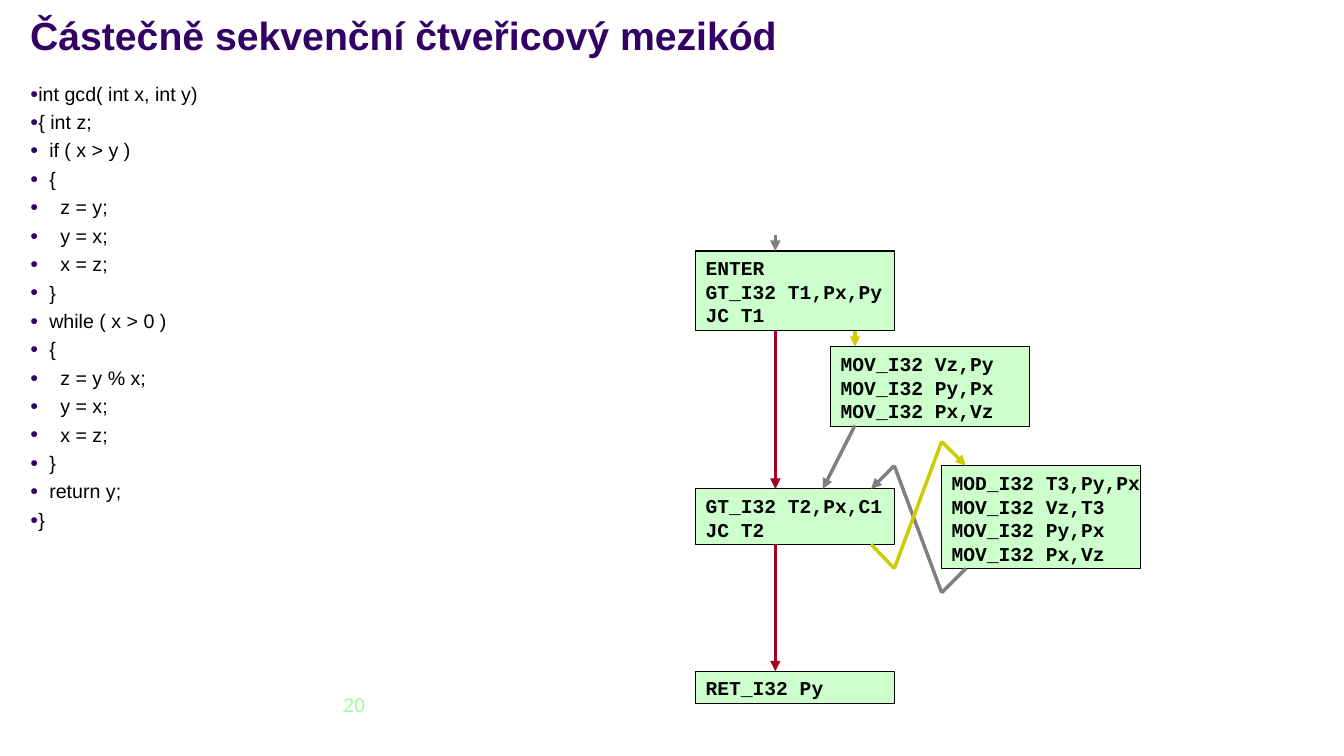
from dataclasses import dataclass
from itertools import pairwise

from lxml import etree
from pptx import Presentation
from pptx.dml.color import RGBColor
from pptx.enum.shapes import MSO_CONNECTOR, MSO_SHAPE
from pptx.enum.text import MSO_ANCHOR, PP_ALIGN
from pptx.oxml.ns import qn
from pptx.util import Inches, Pt

RECTANGLE = MSO_SHAPE.RECTANGLE
STRAIGHT = MSO_CONNECTOR.STRAIGHT
TOP, BOTTOM = MSO_ANCHOR.TOP, MSO_ANCHOR.BOTTOM
LEFT, RIGHT = PP_ALIGN.LEFT, PP_ALIGN.RIGHT

PURPLE, BLACK, PALE_GREEN, LIGHT_GREEN = "330066", "000000", "CCFFCC", "99FF99"
RED, GRAY, YELLOW = "A50021", "808080", "CCCC00"

BLOCK_WIDTH = 1.97
FIRST_LINE_HEIGHT, NEXT_LINE_HEIGHT = 0.32, 0.235
BULLET_WIDTH, LEVEL_INDENT = 0.08, 0.11


@dataclass(frozen=True)
class Block:
    left: float
    top: float
    instructions: tuple[str, ...]


@dataclass(frozen=True)
class Flow:
    color: str
    points: tuple[tuple[float, float], ...]


@dataclass(frozen=True)
class CodeLine:
    level: int
    text: str


SOURCE_CODE = (
    CodeLine(0, "int gcd( int x, int y)"),
    CodeLine(0, "{ int z;"),
    CodeLine(1, "if ( x > y )"),
    CodeLine(1, "{"),
    CodeLine(2, "z = y;"),
    CodeLine(2, "y = x;"),
    CodeLine(2, "x = z;"),
    CodeLine(1, "}"),
    CodeLine(1, "while ( x > 0 )"),
    CodeLine(1, "{"),
    CodeLine(2, "z = y % x;"),
    CodeLine(2, "y = x;"),
    CodeLine(2, "x = z;"),
    CodeLine(1, "}"),
    CodeLine(1, "return y;"),
    CodeLine(0, "}"),
)

BLOCKS = (
    Block(6.9, 2.49, ("ENTER", "GT_I32 T1,Px,Py", "JC T1")),
    Block(6.9, 4.85, ("GT_I32 T2,Px,C1", "JC T2")),
    Block(6.9, 6.66, ("RET_I32 Py",)),
    Block(8.24, 3.44, ("MOV_I32 Vz,Py", "MOV_I32 Py,Px", "MOV_I32 Px,Vz")),
    Block(9.34, 4.62, ("MOD_I32 T3,Py,Px", "MOV_I32 Vz,T3", "MOV_I32 Py,Px", "MOV_I32 Px,Vz")),
)

FLOWS = (
    Flow(RED, ((7.69, 3.28), (7.69, 4.85))),
    Flow(GRAY, ((8.48, 4.22), (8.16, 4.85))),
    Flow(GRAY, ((9.58, 5.64), (9.34, 5.88), (8.87, 4.62), (8.64, 4.85))),
    Flow(YELLOW, ((8.64, 5.4), (8.87, 5.64), (9.34, 4.38), (9.58, 4.62))),
    Flow(RED, ((7.69, 5.4), (7.69, 6.66))),
    Flow(YELLOW, ((8.48, 3.28), (8.48, 3.44))),
    Flow(GRAY, ((7.69, 2.33), (7.69, 2.49))),
)


def rgb(color: str) -> RGBColor:
    return RGBColor.from_string(color)


def write(frame, text: str, *, size=14, font="Arial", color=BLACK, bold=False,
          align=LEFT, anchor=TOP, wrap=True, line_spacing=None, space_before=0) -> None:
    frame.word_wrap = wrap
    frame.vertical_anchor = anchor
    frame.text = text
    for index, paragraph in enumerate(frame.paragraphs):
        paragraph.alignment = align
        paragraph.space_before = Pt(space_before if index else 0)
        if line_spacing:
            paragraph.line_spacing = Pt(line_spacing)
        for run in paragraph.runs:
            run.font.size = Pt(size)
            run.font.name = font
            run.font.bold = bold
            run.font.color.rgb = rgb(color)


def add_text(slide, left: float, top: float, width: float, height: float, text: str, **text_format):
    box = slide.shapes.add_textbox(Inches(left), Inches(top), Inches(width), Inches(height))
    write(box.text_frame, text, **text_format)
    return box.text_frame


def add_bullet(paragraph, level: int) -> None:
    margin = Inches(BULLET_WIDTH + level * LEVEL_INDENT) if level else 0
    properties = paragraph._p.get_or_add_pPr()
    properties.set("marL", str(margin))
    properties.set("indent", str(-margin))
    bullet_color = etree.SubElement(properties, qn("a:buClr"))
    etree.SubElement(bullet_color, qn("a:srgbClr"), val=PURPLE)
    etree.SubElement(properties, qn("a:buSzPct"), val="70000")
    etree.SubElement(properties, qn("a:buFont"), typeface="Arial")
    etree.SubElement(properties, qn("a:buChar"), char="●")


def add_source_code(slide) -> None:
    listing = "\n".join(line.text for line in SOURCE_CODE)
    frame = add_text(slide, 0.2, 0.76, 6.35, 6.61, listing, space_before=3.5)
    for paragraph, line in zip(frame.paragraphs, SOURCE_CODE):
        add_bullet(paragraph, line.level)


def add_block(slide, block: Block) -> None:
    height = FIRST_LINE_HEIGHT + NEXT_LINE_HEIGHT * (len(block.instructions) - 1)
    rectangle = slide.shapes.add_shape(
        RECTANGLE, Inches(block.left), Inches(block.top), Inches(BLOCK_WIDTH), Inches(height))
    rectangle.shadow.inherit = False
    rectangle.fill.solid()
    rectangle.fill.fore_color.rgb = rgb(PALE_GREEN)
    rectangle.line.color.rgb = rgb(BLACK)
    rectangle.line.width = Pt(0.75)
    write(rectangle.text_frame, "\n".join(block.instructions), font="Courier New",
          bold=True, wrap=False, line_spacing=16.9)


def add_flow(slide, flow: Flow) -> None:
    for start, end in pairwise(flow.points):
        segment = slide.shapes.add_connector(STRAIGHT, *map(Inches, start + end))
        segment.line.color.rgb = rgb(flow.color)
        segment.line.width = Pt(2.5)
        if end == flow.points[-1]:
            etree.SubElement(segment.line._get_or_add_ln(), qn("a:tailEnd"), type="triangle")
        etree.SubElement(segment._element.spPr, qn("a:effectLst"))


def main() -> None:
    presentation = Presentation()
    presentation.slide_width = Inches(13.33)
    presentation.slide_height = Inches(7.5)
    slide = presentation.slides.add_slide(presentation.slide_layouts[6])
    add_text(slide, 0.67, 6.83, 3.05, 0.5, "20", color=LIGHT_GREEN, align=RIGHT)
    add_text(slide, 0.2, 0.13, 11.46, 0.5, "Částečně sekvenční čtveřicový mezikód",
             size=28, color=PURPLE, bold=True, anchor=BOTTOM)
    add_source_code(slide)
    for block in BLOCKS:
        add_block(slide, block)
    for flow in FLOWS:
        add_flow(slide, flow)
    presentation.save("out.pptx")


if __name__ == "__main__":
    main()
